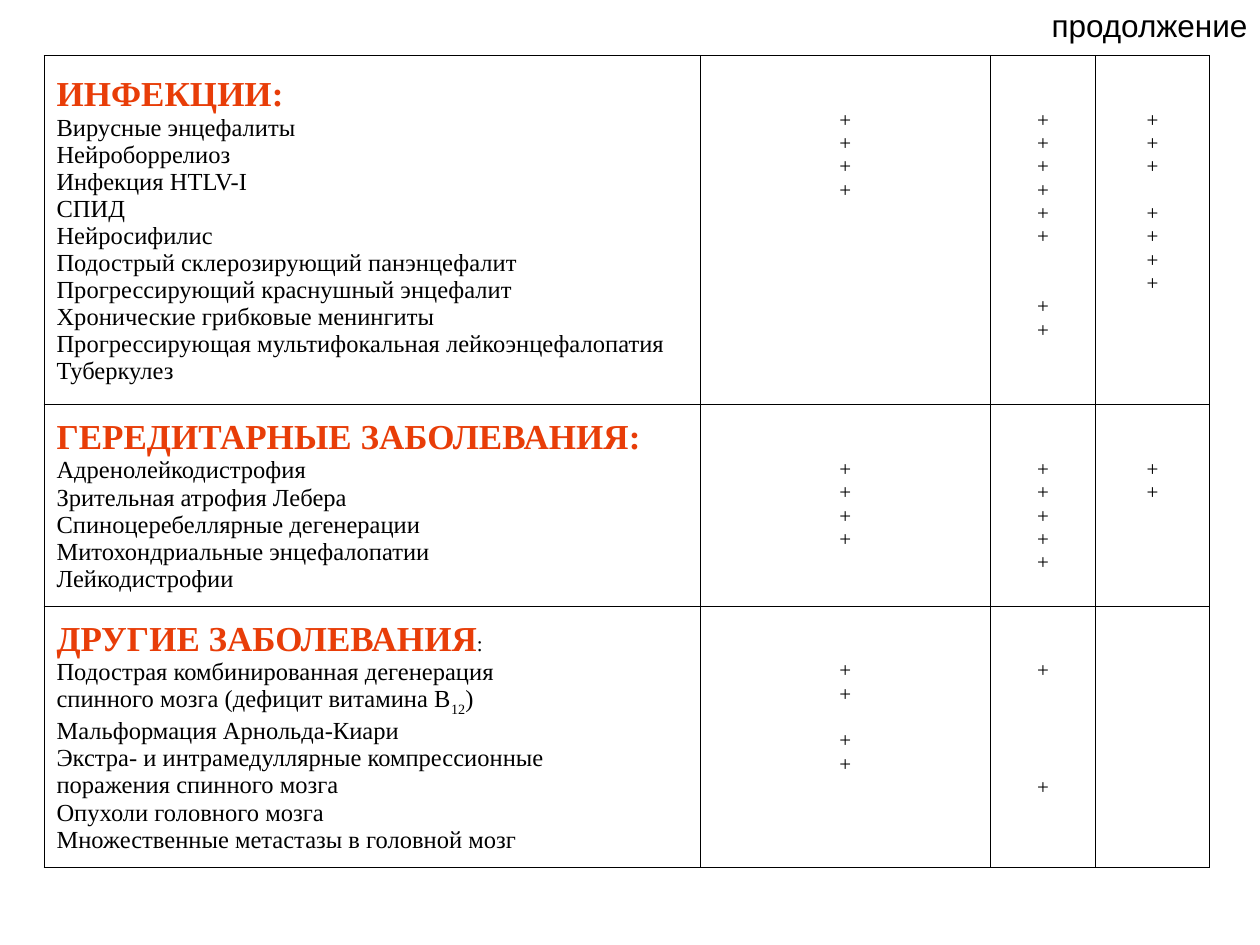
from dataclasses import dataclass

from lxml.etree import SubElement
from pptx import Presentation
from pptx.dml.color import RGBColor
from pptx.enum.text import MSO_ANCHOR, PP_ALIGN
from pptx.oxml import parse_xml
from pptx.oxml.ns import nsdecls, qn
from pptx.util import Cm, Pt


@dataclass(frozen=True)
class Theme:
    black: RGBColor = RGBColor(0x00, 0x00, 0x00)
    accent: RGBColor = RGBColor(0xE8, 0x3D, 0x08)
    table_font: str = "Times New Roman"
    label_font: str = "Arial"
    label_size: int = 18
    heading_size: int = 20
    disease_size: int = 14
    mark_size: int = 12
    mark_pitch: float = 13.3
    border_width: float = 0.75


@dataclass(frozen=True)
class Box:
    left: float
    top: float
    width: float
    height: float

    def lengths(self):
        return Cm(self.left), Cm(self.top), Cm(self.width), Cm(self.height)


THEME = Theme()
LABEL = dict(name=THEME.label_font, size=Pt(THEME.label_size), color=THEME.black)
HEADING = dict(name=THEME.table_font, size=Pt(THEME.heading_size), color=THEME.accent, bold=True)
DISEASE = dict(name=THEME.table_font, size=Pt(THEME.disease_size), color=THEME.black, bold=False)
MARK = DISEASE | dict(size=Pt(THEME.mark_size))

COLUMN_WIDTHS = [13.23, 5.84, 2.13, 2.29]
ROW_HEIGHTS = [7.04, 4.06, 5.26]
CELL_MARGINS = dict(margin_left=Cm(0.25), margin_right=Cm(0.25),
                    margin_top=Cm(0.13), margin_bottom=Cm(0.13))
MARKS_TOP = Cm(1.07)

# Heading, its closing colon in small type, diseases (_subscript_),
# and one mark pattern per column: "+" is a mark, "." an empty line.
GROUPS = [
    ("ИНФЕКЦИИ:", "", [
        "Вирусные энцефалиты",
        "Нейроборрелиоз",
        "Инфекция HTLV-I",
        "СПИД",
        "Нейросифилис",
        "Подострый склерозирующий панэнцефалит",
        "Прогрессирующий краснушный энцефалит",
        "Хронические грибковые менингиты",
        "Прогрессирующая мультифокальная лейкоэнцефалопатия",
        "Туберкулез",
    ], ["++++", "++++++..++", "+++.++++"]),
    ("ГЕРЕДИТАРНЫЕ ЗАБОЛЕВАНИЯ:", "", [
        "Адренолейкодистрофия",
        "Зрительная атрофия Лебера",
        "Спиноцеребеллярные дегенерации",
        "Митохондриальные энцефалопатии",
        "Лейкодистрофии",
    ], ["++++", "+++++", "++"]),
    ("ДРУГИЕ ЗАБОЛЕВАНИЯ", ":", [
        "Подострая комбинированная дегенерация",
        "спинного мозга (дефицит витамина В_12_)",
        "Мальформация Арнольда-Киари",
        "Экстра- и интрамедуллярные компрессионные",
        "поражения спинного мозга",
        "Опухоли головного мозга",
        "Множественные метастазы в головной мозг",
    ], ["++.++", "+....+", ""]),
]


def add_run(paragraph, text, style):
    run = paragraph.add_run()
    run.text = text
    for name, value in style.items():
        if name == "color":
            run.font.color.rgb = value
        else:
            setattr(run.font, name, value)
    return run


def next_paragraph(text_frame):
    """Return the first paragraph while it is empty, then new ones."""
    first = text_frame.paragraphs[0]
    return text_frame.add_paragraph() if first.runs else first


def format_cell(cell):
    for name, value in CELL_MARGINS.items():
        setattr(cell, name, value)
    cell.fill.background()
    properties = cell._tc.get_or_add_tcPr()
    for position, side in enumerate(("lnL", "lnR", "lnT", "lnB")):
        line = parse_xml(f'<a:{side} {nsdecls("a")} w="{Pt(THEME.border_width)}"/>')
        fill = SubElement(line, qn("a:solidFill"))
        SubElement(fill, qn("a:srgbClr"), val=str(THEME.black))
        properties.insert(position, line)


def fill_disease_cell(cell, heading, colon, diseases):
    cell.vertical_anchor = MSO_ANCHOR.MIDDLE
    paragraph = next_paragraph(cell.text_frame)
    add_run(paragraph, heading, HEADING)
    if colon:
        add_run(paragraph, colon, MARK)
    for disease in diseases:
        paragraph = next_paragraph(cell.text_frame)
        for index, part in enumerate(disease.split("_")):
            run = add_run(paragraph, part, DISEASE)
            if index % 2:
                run._r.get_or_add_rPr().set("baseline", "-30000")


def fill_mark_cell(cell, pattern):
    """Write the marks, turning empty lines into space before the next mark."""
    cell.margin_top = MARKS_TOP
    gap = 0
    for symbol in pattern:
        if symbol == ".":
            gap += 1
            continue
        paragraph = next_paragraph(cell.text_frame)
        paragraph.alignment = PP_ALIGN.CENTER
        if gap:
            paragraph.space_before = Pt(round(gap * THEME.mark_pitch, 1))
        add_run(paragraph, symbol, MARK)
        gap = 0


def add_disease_table(slide, box):
    table = slide.shapes.add_table(len(ROW_HEIGHTS), len(COLUMN_WIDTHS), *box.lengths()).table
    table.first_row = table.horz_banding = False
    for column, width in zip(table.columns, COLUMN_WIDTHS):
        column.width = Cm(width)
    for row, height, group in zip(table.rows, ROW_HEIGHTS, GROUPS):
        row.height = Cm(height)
        heading, colon, diseases, patterns = group
        disease_cell, *mark_cells = row.cells
        for cell in row.cells:
            format_cell(cell)
        fill_disease_cell(disease_cell, heading, colon, diseases)
        for cell, pattern in zip(mark_cells, patterns):
            fill_mark_cell(cell, pattern)


def add_continuation_label(slide, box):
    text_frame = slide.shapes.add_textbox(*box.lengths()).text_frame
    text_frame.word_wrap = True
    paragraph = text_frame.paragraphs[0]
    paragraph.alignment = PP_ALIGN.RIGHT
    add_run(paragraph, "продолжение", LABEL)


def main():
    presentation = Presentation()
    presentation.slide_width, presentation.slide_height = Cm(25.4), Cm(19.05)
    slide = presentation.slides.add_slide(presentation.slide_layouts[6])
    add_disease_table(slide, Box(0.89, 1.12, sum(COLUMN_WIDTHS), sum(ROW_HEIGHTS)))
    add_continuation_label(slide, Box(18.8, 0, 6.6, 1.02))
    presentation.save("out.pptx")


if __name__ == "__main__":
    main()
